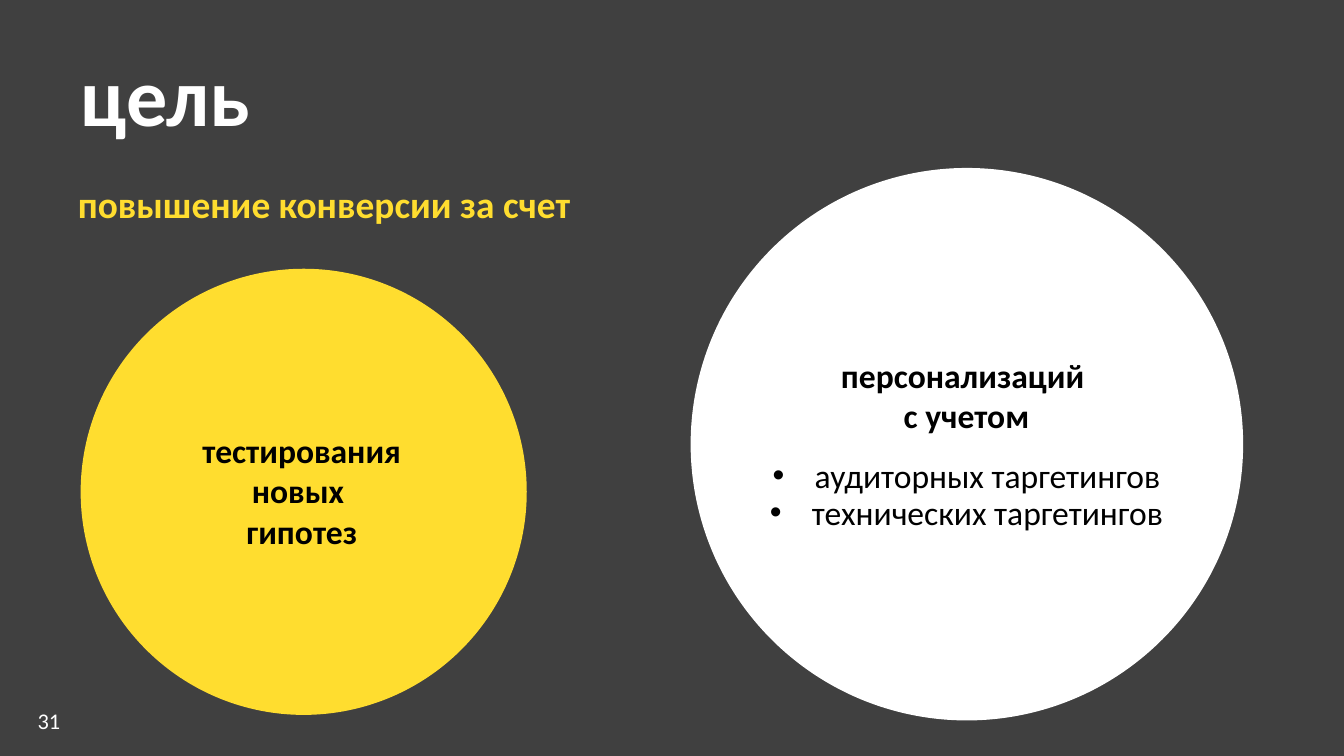
"""Build the dark goal slide with two circles naming the ways to raise conversion."""
from lxml.etree import SubElement
from pptx import Presentation
from pptx.dml.color import RGBColor
from pptx.enum.shapes import MSO_SHAPE
from pptx.enum.text import MSO_ANCHOR, PP_ALIGN
from pptx.oxml.ns import qn
from pptx.util import Pt

COLORS = {"dark": "404040", "yellow": "FFDD2F", "white": "FFFFFF", "black": "000000"}
WIDTH, HEIGHT = 720, 405


def add_filled(shapes, kind, box, color):
    shape = shapes.add_shape(kind, *map(Pt, box))
    shape.shadow.inherit = False
    shape.fill.solid()
    shape.fill.fore_color.rgb = RGBColor.from_string(COLORS[color])
    shape.line.fill.background()
    return shape


def write(paragraph, text, color, font_format, paragraph_format):
    paragraph.text = text
    for run in paragraph.runs:
        run.font.color.rgb = RGBColor.from_string(COLORS[color])
        for name, value in font_format.items():
            setattr(run.font, name, value)
    for name, value in paragraph_format.items():
        setattr(paragraph, name, value)


presentation = Presentation()
presentation.slide_width, presentation.slide_height = Pt(WIDTH), Pt(HEIGHT)
slide = presentation.slides.add_slide(presentation.slide_layouts[1])
title, body = slide.placeholders

backdrop = add_filled(slide.shapes, MSO_SHAPE.RECTANGLE, (0, 0, WIDTH, HEIGHT), "dark")
title.element.addprevious(backdrop.element)

number = slide.shapes.add_textbox(0, 0, 0, 0)
number.text_frame.word_wrap = True
number.text_frame.vertical_anchor = MSO_ANCHOR.MIDDLE

labels = [
    (title, (36, 16.5, 648, 67.5), "цель", "white", 44, True),
    (body, (34.5, 93.6, 292.5, 64.8), "повышение конверсии за счет", "yellow", 20, True),
    (number, (13, 375, 168, 21.6), "31", "white", 12, False),
]
for shape, box, text, color, size, bold in labels:
    shape.left, shape.top, shape.width, shape.height = map(Pt, box)
    font_format = {"name": "Calibri", "size": Pt(size), "bold": bold}
    write(shape.text_frame.paragraphs[0], text, color, font_format, {"alignment": PP_ALIGN.LEFT})

body_properties = body.text_frame.paragraphs[0]._p.get_or_add_pPr()
body_properties.set("marL", "0")
body_properties.set("indent", "0")
SubElement(body_properties, qn("a:buNone"))

circles = [
    ((43.2, 144, 239, 239), "yellow", (80, 226.8, 163.4, 72.7),
     "тестирования новых \nгипотез", []),
    ((370, 90, 296, 296), "white", (399, 186.5, 237.6, 103.7),
     "персонализаций \nс учетом", ["аудиторных таргетингов", "технических таргетингов"]),
]
for circle_box, color, text_box, heading, bullets in circles:
    group = slide.shapes.add_group_shape()
    add_filled(group.shapes, MSO_SHAPE.OVAL, circle_box, color)
    text_frame = group.shapes.add_textbox(*map(Pt, text_box)).text_frame
    text_frame.word_wrap = True
    heading_format = {"alignment": PP_ALIGN.CENTER, "space_after": Pt(12 if bullets else 0)}
    font_format = {"name": "Calibri", "size": Pt(18), "bold": True}
    write(text_frame.paragraphs[0], heading, "black", font_format, heading_format)
    for bullet in bullets:
        paragraph = text_frame.add_paragraph()
        bullet_format = {"alignment": PP_ALIGN.CENTER, "line_spacing": Pt(20)}
        write(paragraph, bullet, "black", font_format | {"bold": False}, bullet_format)
        properties = paragraph._p.get_or_add_pPr()
        properties.set("marL", str(Pt(22.5)))
        properties.set("indent", str(-Pt(22.5)))
        SubElement(properties, qn("a:buFont"), typeface="Arial")
        SubElement(properties, qn("a:buChar"), char="•")

presentation.save("out.pptx")
